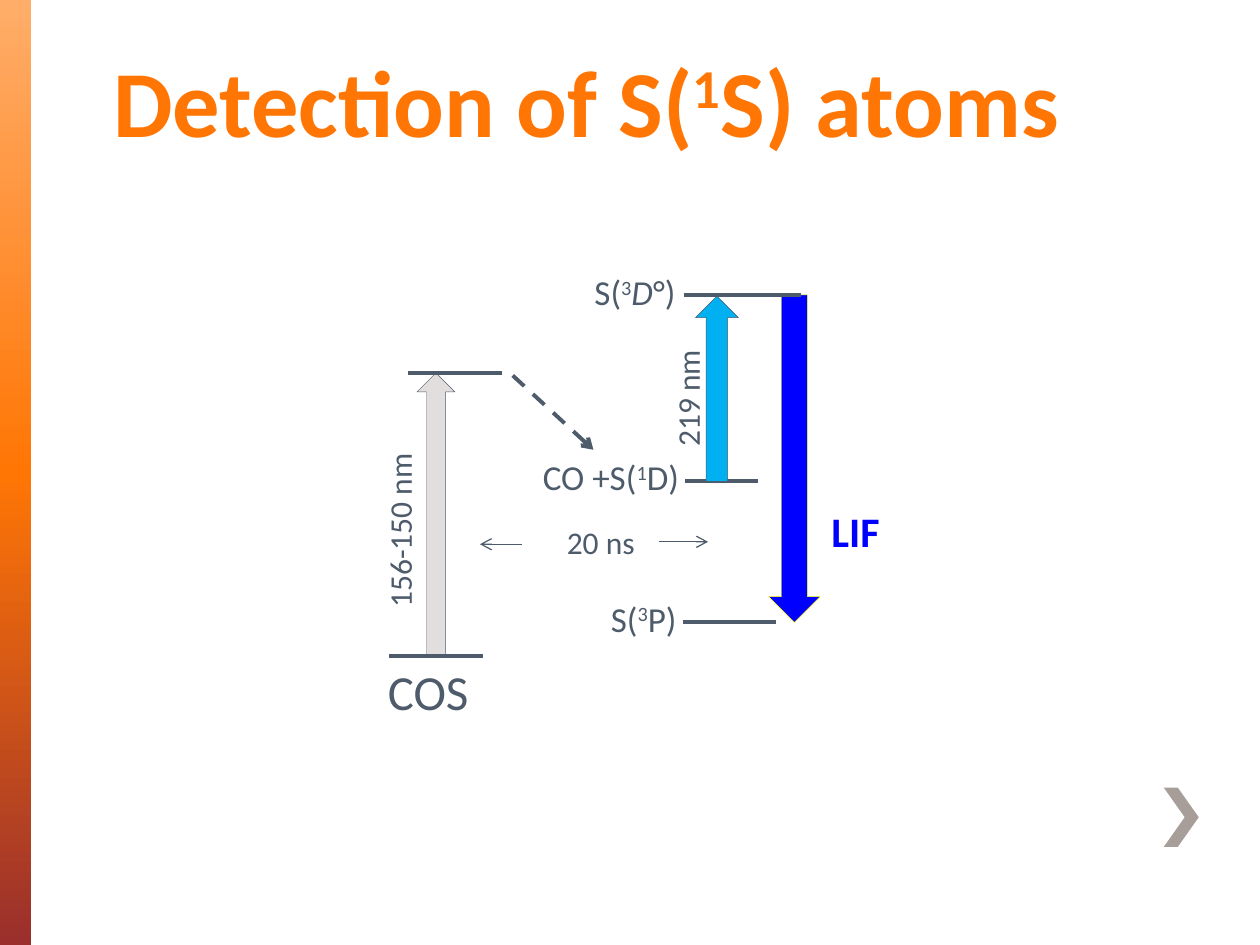
import dataclasses
import typing

import lxml.etree
import pptx
import pptx.dml.color
import pptx.enum.dml
import pptx.enum.shapes
import pptx.enum.text
import pptx.oxml
import pptx.oxml.ns
import pptx.util

Pt = pptx.util.Pt


@dataclasses.dataclass(frozen=True)
class Theme:
    font: str = "Calibri"
    slate: str = "4D5B6B"
    orange: str = "FF7605"
    blue: str = "0000FF"
    cyan: str = "00B0F0"
    grey: str = "E2DEDD"
    yellow: str = "FFFF00"
    chevron: str = "A79D99"
    band: tuple = ((0, "FFAD69"), (50, "FF7605"), (100, "9A2F2C"))
    title: float = 54
    molecule: float = 28
    emission: float = 24
    state: float = 20
    caption: float = 18
    level: float = 2.25
    thin: float = 0.75
    outline: float = 0.25


THEME = Theme()


class Span(typing.NamedTuple):
    text: str
    superscript: bool = False
    italic: bool = False


class Line(typing.NamedTuple):
    start: tuple
    end: tuple
    weight: float = THEME.level
    arrow: bool = False
    dashed: bool = False


class Transition(typing.NamedTuple):
    left: float
    top: float
    width: float
    height: float
    fill: str
    outline: str
    upward: bool


class Label(typing.NamedTuple):
    spans: list
    left: float
    top: float
    width: float
    height: float
    size: float
    color: str = THEME.slate
    bold: bool = False
    rotation: float = 0
    wrap: bool = False


def rgb(value: str) -> pptx.dml.color.RGBColor:
    return pptx.dml.color.RGBColor.from_string(value)


def level(left: float, right: float, height: float) -> Line:
    return Line((left, height), (right, height))


def term(before: str, multiplicity: str, after: str) -> list:
    return [Span(before), Span(multiplicity, superscript=True), Span(after)]


def add_text(page, spans: list, *, left: float, top: float, width: float, height: float,
             size: float, color: str, bold: bool, rotation: float, wrap: bool) -> None:
    box = page.shapes.add_textbox(Pt(left), Pt(top), Pt(width), Pt(height))
    box.rotation = rotation
    box.text_frame.word_wrap = wrap
    box.text_frame.auto_size = pptx.enum.text.MSO_AUTO_SIZE.SHAPE_TO_FIT_TEXT
    para = box.text_frame.paragraphs[0]
    for span in spans:
        run = para.add_run()
        run.text = span.text
        run.font.name = THEME.font
        run.font.size = Pt(size)
        run.font.bold = bold
        run.font.italic = span.italic
        run.font.color.rgb = rgb(color)
        if span.superscript:
            run.font._element.set("baseline", "30000")


def add_line(page, line: Line) -> None:
    connector = page.shapes.add_connector(
        pptx.enum.shapes.MSO_CONNECTOR.STRAIGHT, *map(Pt, line.start + line.end))
    connector.line.color.rgb = rgb(THEME.slate)
    connector.line.width = Pt(line.weight)
    if line.dashed:
        connector.line.dash_style = pptx.enum.dml.MSO_LINE.DASH
    if line.arrow:
        tail = lxml.etree.SubElement(connector.line._get_or_add_ln(), pptx.oxml.ns.qn("a:tailEnd"))
        tail.set("type", "arrow")
    lxml.etree.SubElement(connector._element.spPr, pptx.oxml.ns.qn("a:effectLst"))


def add_transition(page, transition: Transition) -> None:
    arrow = page.shapes.add_shape(
        pptx.enum.shapes.MSO_SHAPE.DOWN_ARROW, *map(Pt, transition[:4]))
    arrow.rotation = 180 if transition.upward else 0
    arrow.shadow.inherit = False
    arrow.fill.solid()
    arrow.fill.fore_color.rgb = rgb(transition.fill)
    arrow.line.color.rgb = rgb(transition.outline)
    arrow.line.width = Pt(THEME.outline)


def add_band(page) -> None:
    band = page.shapes.add_shape(pptx.enum.shapes.MSO_SHAPE.RECTANGLE, 0, 0, Pt(18), Pt(540))
    band.shadow.inherit = False
    band.line.fill.background()
    band.fill.gradient()
    band.fill.gradient_angle = 270
    stops = band._element.spPr.find(".//" + pptx.oxml.ns.qn("a:gsLst"))
    for stop in list(stops):
        stops.remove(stop)
    for position, color in THEME.band:
        stop = lxml.etree.SubElement(stops, pptx.oxml.ns.qn("a:gs"), pos=str(position * 1000))
        lxml.etree.SubElement(stop, pptx.oxml.ns.qn("a:srgbClr"), val=color)


def add_chevron(page) -> None:
    left, middle, notch, right = 665.3, 673.2, 676.8, 684.7
    top, center, bottom = 450, 467, 484
    builder = page.shapes.build_freeform(middle, top, scale=Pt(1))
    builder.add_line_segments([(left, top), (notch, center), (left, bottom),
                               (middle, bottom), (right, center)], close=True)
    chevron = builder.convert_to_shape()
    chevron.shadow.inherit = False
    chevron.fill.solid()
    chevron.fill.fore_color.rgb = rgb(THEME.chevron)
    chevron.line.fill.background()


LOWER_LEVELS = [level(390.2, 443.5, 355.7), level(391.7, 433.4, 275)]
TRANSITIONS = [
    Transition(238.3, 213.1, 21.6, 161.3, THEME.grey, THEME.slate, True),
    Transition(397.4, 169.2, 24.5, 105.8, THEME.cyan, THEME.slate, True),
    Transition(439.2, 168.5, 29.5, 187.2, THEME.blue, THEME.yellow, False),
]
UPPER_LINES = [
    level(222.5, 275.8, 375.1),
    level(233.3, 286.6, 213.1),
    level(391, 457.9, 168.5),
    Line((293, 214.6), (339.1, 257), arrow=True, dashed=True),
    Line((298.1, 311), (274.3, 311), THEME.thin, arrow=True),
    Line((376.6, 309.6), (404.6, 309.6), THEME.thin, arrow=True),
]
LABELS = [
    Label(term("Detection of S(", "1", "S) atoms"), 57.6, 20.9, 563, 72.7,
          THEME.title, THEME.orange, bold=True),
    Label(term("S(", "3", "P)"), 342, 337.7, 53.3, 31.7, THEME.state),
    Label(term("CO +S(", "1", "D)"), 303.1, 257, 94.3, 31.7, THEME.state),
    Label([Span("S("), Span("3", superscript=True), Span("D", italic=True), Span("°)")],
          332.6, 151.2, 85, 31.7, THEME.state, wrap=True),
    Label([Span("COS")], 214.6, 374.4, 61.2, 41, THEME.molecule),
    Label([Span("LIF")], 468, 285.1, 59, 45.4, THEME.emission, THEME.blue, bold=True),
    Label([Span("156-150 nm")], 169.9, 270, 128.2, 40.3, THEME.caption, rotation=270),
    Label([Span("219 nm")], 355, 198.7, 87.1, 40.3, THEME.caption, rotation=270),
    Label([Span("20 ns")], 316.8, 295.2, 54, 28.8, THEME.caption),
]


def main() -> None:
    deck = pptx.Presentation()
    deck.slide_width, deck.slide_height = Pt(720), Pt(540)
    page = deck.slides.add_slide(deck.slide_layouts[6])
    add_band(page)
    add_chevron(page)
    for line in LOWER_LEVELS:
        add_line(page, line)
    for transition in TRANSITIONS:
        add_transition(page, transition)
    for line in UPPER_LINES:
        add_line(page, line)
    for label in LABELS:
        add_text(page, **label._asdict())
    deck.save("out.pptx")


if __name__ == "__main__":
    main()
